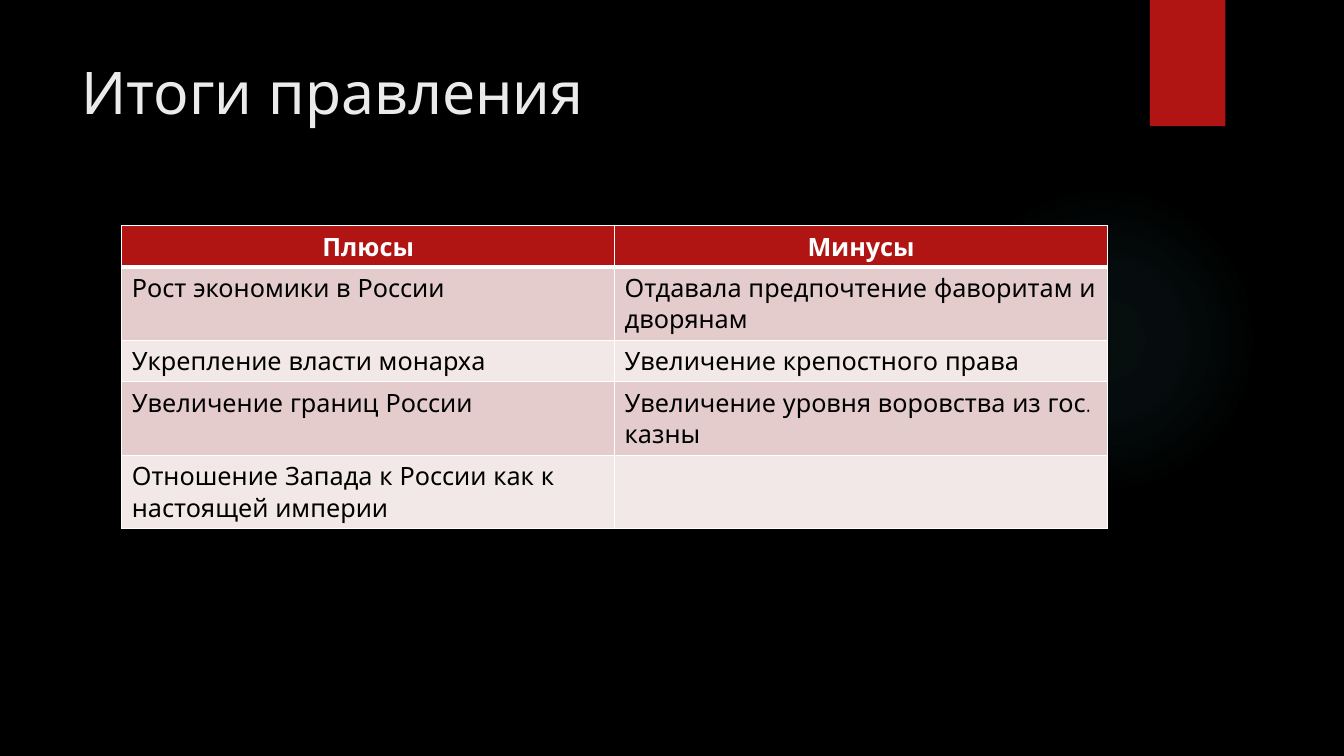
import pptx
import pptx.dml.color
import pptx.enum.shapes
import pptx.enum.text
import pptx.oxml
import pptx.oxml.ns
import pptx.util

Cm = pptx.util.Cm
Pt = pptx.util.Pt


def color(value):
    return pptx.dml.color.RGBColor.from_string(value)


def write(frame, text, size=18, fill="000000", bold=False, align=pptx.enum.text.PP_ALIGN.LEFT):
    paragraph = frame.paragraphs[0]
    paragraph.text = text
    paragraph.alignment = align
    paragraph.font.name = "Quicksand"
    paragraph.font.size = Pt(size)
    paragraph.font.bold = bold
    paragraph.font.color.rgb = color(fill)


namespace = pptx.oxml.ns.nsdecls("a")
presentation = pptx.Presentation()
presentation.slide_width = Cm(33.87)
presentation.slide_height = Cm(19.05)
slide = presentation.slides.add_slide(presentation.slide_layouts[6])
slide.background.fill.solid()
slide.background.fill.fore_color.rgb = color("000000")

glow = slide.shapes.add_shape(
    pptx.enum.shapes.MSO_SHAPE.OVAL, Cm(23.9), Cm(4.65), Cm(7.82), Cm(7.82))
glow.shadow.inherit = False
glow.line.fill.background()
glow.fill.background()
stops = "".join(
    f'<a:gs pos="{position}000"><a:srgbClr val="50B9C1"><a:alpha val="{alpha}000"/></a:srgbClr></a:gs>'
    for position, alpha in [(0, 7), (36, 6), (69, 0)])
gradient = pptx.oxml.parse_xml(
    f'<a:gradFill {namespace} rotWithShape="1"><a:gsLst>{stops}</a:gsLst><a:path path="circle">'
    '<a:fillToRect l="50000" t="50000" r="50000" b="50000"/></a:path></a:gradFill>')
properties = glow.element.spPr
properties.replace(properties.find(pptx.oxml.ns.qn("a:noFill")), gradient)

ribbon = slide.shapes.add_shape(
    pptx.enum.shapes.MSO_SHAPE.RECTANGLE, Cm(28.98), Cm(0), Cm(1.9), Cm(3.18))
ribbon.shadow.inherit = False
ribbon.line.fill.background()
ribbon.fill.solid()
ribbon.fill.fore_color.rgb = color("B01513")

title = slide.shapes.add_textbox(Cm(1.8), Cm(1.27), Cm(26.14), Cm(3.89))
title.text_frame.word_wrap = True
write(title.text_frame, "Итоги правления", size=42, fill="EBEBEB")

rows = [
    ("Плюсы", "Минусы"),
    ("Рост экономики в России", "Отдавала предпочтение фаворитам и дворянам"),
    ("Укрепление власти монарха", "Увеличение крепостного права"),
    ("Увеличение границ России", "Увеличение уровня воровства из гос. казны"),
    ("Отношение Запада к России как к настоящей империи", ""),
]
heights = [1.04, 1.85, 1.04, 1.85, 1.85]
table = slide.shapes.add_table(
    len(rows), 2, Cm(3.07), Cm(5.69), Cm(24.84), Cm(sum(heights))).table
for column in table.columns:
    column.width = Cm(12.42)

for row_index, texts in enumerate(rows):
    table.rows[row_index].height = Cm(heights[row_index])
    header = row_index == 0
    widths = {"L": 1, "R": 1, "T": 3 if row_index == 1 else 1, "B": 3 if header else 1}
    for column_index, text in enumerate(texts):
        cell = table.cell(row_index, column_index)
        if header:
            write(cell.text_frame, text, fill="FFFFFF", bold=True,
                  align=pptx.enum.text.PP_ALIGN.CENTER)
        else:
            write(cell.text_frame, text)
        cell_properties = cell._tc.get_or_add_tcPr()
        for side, width in widths.items():
            cell_properties.append(pptx.oxml.parse_xml(
                f'<a:ln{side} {namespace} w="{Pt(width)}"><a:solidFill>'
                f'<a:srgbClr val="FFFFFF"/></a:solidFill></a:ln{side}>'))
        cell.fill.solid()
        band = "E4CCCC" if row_index % 2 else "F2E8E7"
        cell.fill.fore_color.rgb = color("B01513" if header else band)

presentation.save("out.pptx")
